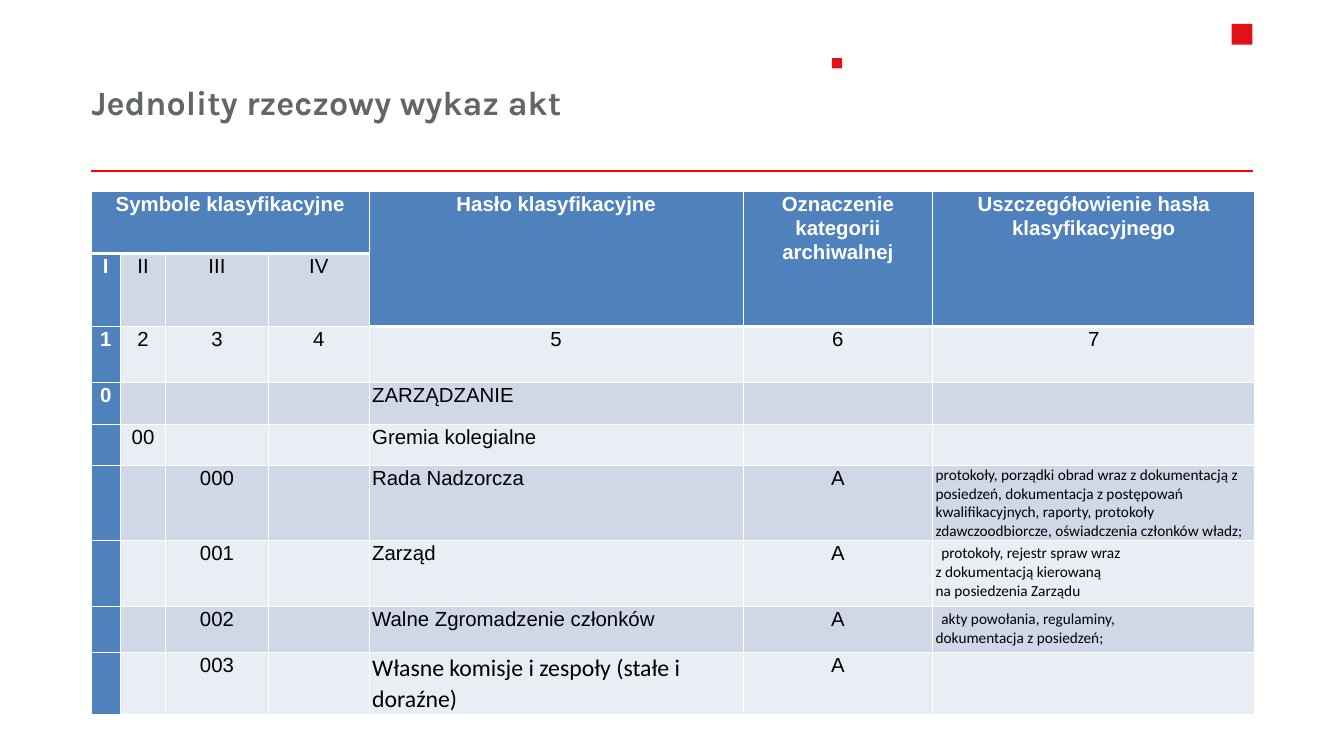
from dataclasses import dataclass

from lxml import etree
from pptx import Presentation
from pptx import util as u
from pptx.dml.color import RGBColor
from pptx.enum import shapes, text
from pptx.oxml import ns

RED = RGBColor(0xFF, 0x00, 0x00)
MARK_RED = RGBColor(0xE2, 0x10, 0x17)
TITLE_GREY = RGBColor(0x61, 0x66, 0x69)
HEADER_BLUE = RGBColor(0x4F, 0x81, 0xBD)
DARK_BAND = RGBColor(0xD0, 0xD8, 0xE8)
LIGHT_BAND = RGBColor(0xE9, 0xED, 0xF4)
WHITE = RGBColor(0xFF, 0xFF, 0xFF)
BLACK = RGBColor(0x00, 0x00, 0x00)

ENTRY_COLUMN, DETAIL_COLUMN = 4, 6
COLUMN_WIDTHS = (0.48, 0.74, 1.68, 1.65, 6.12, 3.1, 5.27)


@dataclass(frozen=True)
class Mark:
    left: float
    top: float
    side: float


@dataclass(frozen=True)
class TableRow:
    height: float
    cells: tuple[str, ...]
    space_after: float = 3
    entry_font: tuple[str, float] = ("Arial", 24)


MARKS = (Mark(20.15, 0.39, 0.34), Mark(13.61, 0.95, 0.17))

ROWS = (
    TableRow(1.02, ("Symbole klasyfikacyjne", "", "", "", "Hasło klasyfikacyjne",
                    "Oznaczenie kategorii archiwalnej",
                    "Uszczegółowienie hasła klasyfikacyjnego")),
    TableRow(1.19, ("I", "II", "III", "IV", "", "", "")),
    TableRow(0.92, ("1", "2", "3", "4", "5", "6", "7"), space_after=0),
    TableRow(0.68, ("0", "", "", "", "ZARZĄDZANIE", "", "")),
    TableRow(0.68, ("", "00", "", "", "Gremia kolegialne", "", "")),
    TableRow(1, ("", "", "000", "", "Rada Nadzorcza", "A",
                 "protokoły, porządki obrad wraz z dokumentacją z\n"
                 "posiedzeń, dokumentacja z postępowań\n"
                 "kwalifikacyjnych, raporty, protokoły zdawczoodbiorcze, "
                 "oświadczenia członków władz;")),
    TableRow(1.08, ("", "", "001", "", "Zarząd", "A",
                    " protokoły, rejestr spraw wraz\n"
                    "z dokumentacją kierowaną\nna posiedzenia Zarządu")),
    TableRow(0.75, ("", "", "002", "", "Walne Zgromadzenie członków", "A",
                    " akty powołania, regulaminy,\ndokumentacja z posiedzeń;")),
    TableRow(0.75, ("", "", "003", "", "Własne komisje i zespoły (stałe i doraźne)",
                    "A", ""), entry_font=("Calibri", 28)),
)


def add_title(slide) -> None:
    title = slide.shapes.title
    title.left, title.top = u.Inches(1.5), u.Inches(1.33)
    title.width, title.height = u.Inches(19.04), u.Inches(0.67)
    frame = title.text_frame
    frame.text = "Jednolity rzeczowy wykaz akt"
    frame.margin_left = frame.margin_right = frame.margin_top = frame.margin_bottom = 0
    frame.vertical_anchor = text.MSO_ANCHOR.TOP
    paragraph = frame.paragraphs[0]
    paragraph.alignment = text.PP_ALIGN.LEFT
    set_font(paragraph.font, "Karla", 40, TITLE_GREY, True)


def add_rule(slide) -> None:
    rule = slide.shapes.add_connector(
        shapes.MSO_CONNECTOR.STRAIGHT,
        u.Inches(1.49), u.Inches(2.8), u.Inches(20.5), u.Inches(2.8))
    rule.line.color.rgb = RED
    rule.line.width = u.Pt(2.47)
    etree.SubElement(rule._element.spPr, ns.qn("a:effectLst"))


def add_mark(slide, mark: Mark) -> None:
    square = slide.shapes.add_shape(
        shapes.MSO_SHAPE.RECTANGLE, u.Inches(mark.left), u.Inches(mark.top),
        u.Inches(mark.side), u.Inches(mark.side))
    square.shadow.inherit = False
    square.fill.solid()
    square.fill.fore_color.rgb = MARK_RED
    square.line.fill.background()


def set_font(font, name: str, size: float, color: RGBColor, bold: bool) -> None:
    font.name, font.size, font.bold = name, u.Pt(size), bold
    font.color.rgb = color


def set_borders(cell, bottom_width: float) -> None:
    properties = cell._tc.get_or_add_tcPr()
    for side, width in (("L", 1), ("R", 1), ("T", 1), ("B", bottom_width)):
        line = etree.SubElement(properties, ns.qn(f"a:ln{side}"), w=str(u.Pt(width)))
        fill = etree.SubElement(line, ns.qn("a:solidFill"))
        etree.SubElement(fill, ns.qn("a:srgbClr"), val=str(WHITE))


def write_details(cell, content: str) -> None:
    cell.text = content
    for paragraph in cell.text_frame.paragraphs:
        line = paragraph.text
        if line.startswith(" "):
            # The leading hard space keeps the larger table font
            paragraph.runs[0].text = " "
            set_font(paragraph.runs[0].font, "Arial", 24, BLACK, False)
            run = paragraph.add_run()
            run.text = line[1:]
            set_font(run.font, "Calibri", 18, BLACK, False)
        else:
            set_font(paragraph.font, "Calibri", 18, BLACK, False)


def fill_cell(cell, row_index: int, column: int) -> None:
    row = ROWS[row_index]
    content = row.cells[column]
    merged_header = row_index == 0 or (row_index == 1 and column >= ENTRY_COLUMN)
    is_header = merged_header or column == 0
    set_borders(cell, 3 if merged_header else 1)
    cell.margin_left = cell.margin_right = u.Inches(0.05)
    cell.margin_top = cell.margin_bottom = 0
    cell.fill.solid()
    band = DARK_BAND if row_index % 2 else LIGHT_BAND
    cell.fill.fore_color.rgb = HEADER_BLUE if is_header else band
    if not content:
        return
    if row_index > 2 and column == DETAIL_COLUMN:
        write_details(cell, content)
        return
    cell.text = content
    paragraph = cell.text_frame.paragraphs[0]
    is_entry = row_index > 2 and column == ENTRY_COLUMN
    paragraph.alignment = text.PP_ALIGN.LEFT if is_entry else text.PP_ALIGN.CENTER
    paragraph.line_spacing = 1.07
    paragraph.space_after = u.Pt(row.space_after)
    name, size = row.entry_font if is_entry else ("Arial", 24)
    set_font(paragraph.font, name, size, WHITE if is_header else BLACK, is_header)


def add_file_plan(slide) -> None:
    frame = slide.shapes.add_table(
        len(ROWS), len(COLUMN_WIDTHS), u.Inches(1.49), u.Inches(3.13),
        u.Inches(sum(COLUMN_WIDTHS)), u.Inches(sum(row.height for row in ROWS)))
    table = frame.table
    for column, width in zip(table.columns, COLUMN_WIDTHS):
        column.width = u.Inches(width)
    for row_index, row in enumerate(ROWS):
        table.rows[row_index].height = u.Inches(row.height)
        for column in range(len(COLUMN_WIDTHS)):
            fill_cell(table.cell(row_index, column), row_index, column)
    # Header spans
    table.cell(0, 0).merge(table.cell(0, ENTRY_COLUMN - 1))
    for column in range(ENTRY_COLUMN, len(COLUMN_WIDTHS)):
        table.cell(0, column).merge(table.cell(1, column))


def main() -> None:
    presentation = Presentation()
    presentation.slide_width = u.Inches(21.99)
    presentation.slide_height = u.Inches(12.37)
    slide = presentation.slides.add_slide(presentation.slide_layouts[5])
    # Page furniture
    add_rule(slide)
    for mark in MARKS:
        add_mark(slide, mark)
    # Content
    add_title(slide)
    add_file_plan(slide)
    presentation.save("out.pptx")


if __name__ == "__main__":
    main()
